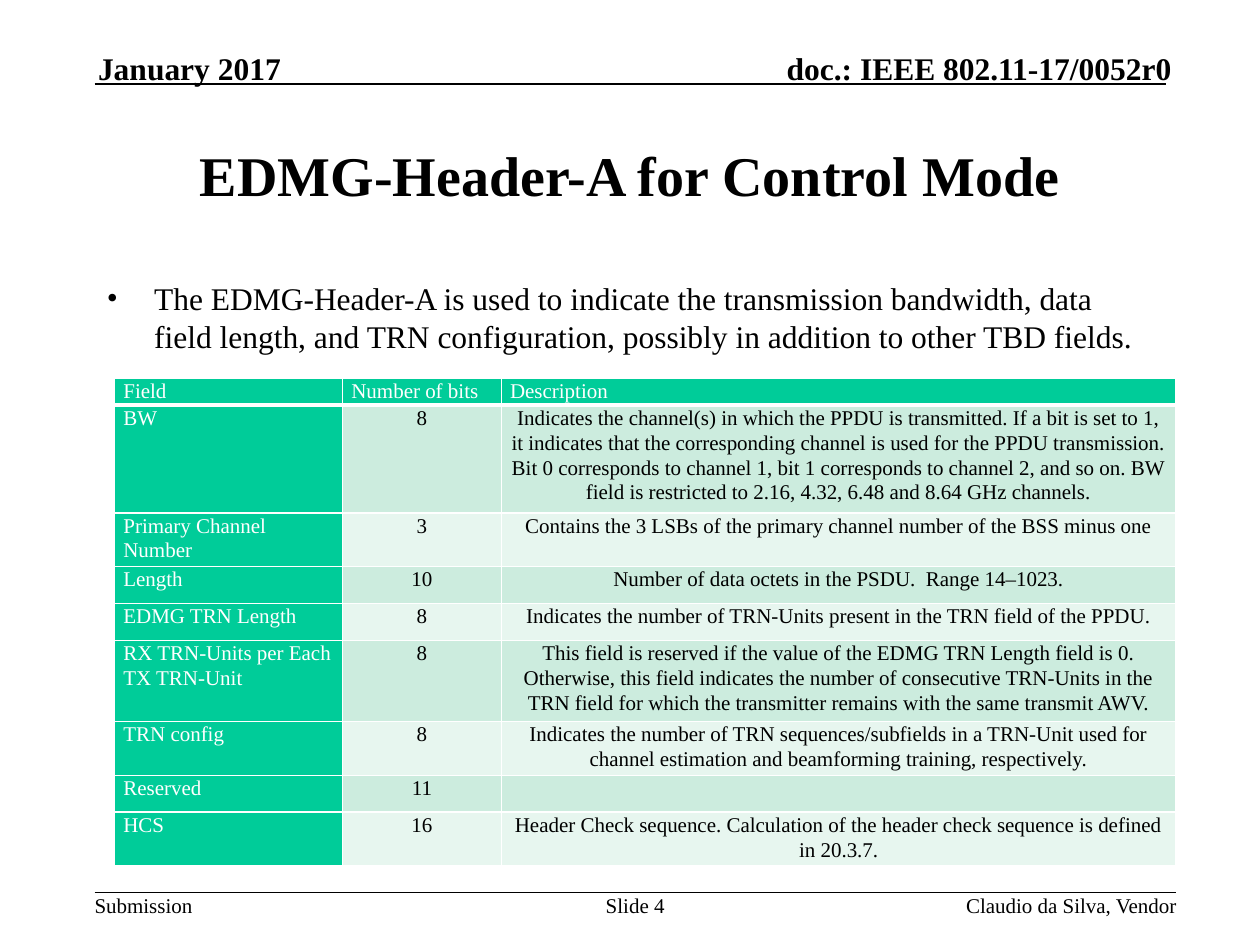
from lxml.etree import SubElement
from pptx import Presentation
from pptx.dml.color import RGBColor
from pptx.enum.shapes import MSO_CONNECTOR as CONN
from pptx.enum.text import MSO_ANCHOR as ANCHOR, PP_ALIGN as ALIGN
from pptx.oxml.ns import qn
from pptx.util import Pt

# Content
FONT = "Times New Roman"
COLORS = {"text": "000000", "white": "FFFFFF", "accent": "00CC99",
          "band_dark": "CCECDE", "band_light": "E7F6EF"}
BULLET = ("The EDMG-Header-A is used to indicate the transmission bandwidth, "
          "data field length, and TRN configuration, possibly in addition to "
          "other TBD fields.")

# text, (left, top, width, height), size, bold, alignment, anchor, wrap
LABELS = [
    ("January 2017", (56, 28, 187, 21.6), 18, True, ALIGN.LEFT, ANCHOR.BOTTOM, True),
    ("doc.: IEEE 802.11-17/0052r0", (394, 28, 275.5, 21.6), 18, True, ALIGN.RIGHT, ANCHOR.BOTTOM, True),
    ("EDMG-Header-A for Control Mode", (54, 54, 612, 91.5), 32, True, ALIGN.CENTER, ANCHOR.MIDDLE, True),
    ("Submission", (54, 510, 56, 14.4), 12, False, ALIGN.LEFT, ANCHOR.TOP, False),
    ("Slide 4", (342, 510, 42, 28.8), 12, False, ALIGN.CENTER, ANCHOR.TOP, True),
    ("Claudio da Silva, Vendor", (484, 510, 188.5, 14.4), 12, False, ALIGN.RIGHT, ANCHOR.TOP, True),
]
RULES = [(54, 48, 666, 48), (54, 510, 672, 510)]

# field, bits, description, text lines in the tallest cell
ROWS = [
    ("Field", "Number of bits", "Description", 1),
    ("BW", "8", "Indicates the channel(s) in which the PPDU is transmitted. If a bit "
     "is set to 1, it indicates that the corresponding channel is used for the PPDU "
     "transmission. Bit 0 corresponds to channel 1, bit 1 corresponds to channel 2, "
     "and so on. BW field is restricted to 2.16, 4.32, 6.48 and 8.64 GHz channels.", 4),
    ("Primary Channel Number", "3",
     "Contains the 3 LSBs of the primary channel number of the BSS minus one", 2),
    ("Length", "10", "Number of data octets in the PSDU.  Range 14–1023.", 1),
    ("EDMG TRN Length", "8",
     "Indicates the number of TRN-Units present in the TRN field of the PPDU.", 1),
    ("RX TRN-Units per Each TX TRN-Unit", "8", "This field is reserved if the value of "
     "the EDMG TRN Length field is 0. Otherwise, this field indicates the number of "
     "consecutive TRN-Units in the TRN field for which the transmitter remains with "
     "the same transmit AWV.", 3),
    ("TRN config", "8", "Indicates the number of TRN sequences/subfields in a TRN-Unit "
     "used for channel estimation and beamforming training, respectively.", 2),
    ("Reserved", "11", "", 1),
    ("HCS", "16", "Header Check sequence. Calculation of the header check sequence is "
     "defined in 20.3.7.", 2),
]
COL_WIDTHS = [130.3, 90.7, 385.6]
TABLE_LEFT, TABLE_TOP = 65.5, 216
LINE_HEIGHT, MIN_ROW = 14.2, 21.1


def rgb(name):
    return RGBColor.from_string(COLORS[name])


def style(p, size, color="text", bold=False, align=ALIGN.LEFT):
    p.alignment = align
    for r in p.runs:
        r.font.name, r.font.size, r.font.bold = FONT, Pt(size), bold
        r.font.color.rgb = rgb(color)


def add_text(slide, text, box, size, bold, align, anchor, wrap, inset=(0, 0)):
    tf = slide.shapes.add_textbox(*map(Pt, box)).text_frame
    tf.word_wrap, tf.vertical_anchor = wrap, anchor
    tf.margin_left = tf.margin_right = Pt(inset[0])
    tf.margin_top = tf.margin_bottom = Pt(inset[1])
    tf.text = text
    style(tf.paragraphs[0], size, bold=bold, align=align)
    return tf.paragraphs[0]


def add_bullet(p, indent):
    pPr = p._p.get_or_add_pPr()
    pPr.set("marL", str(Pt(indent)))
    pPr.set("indent", str(-Pt(indent)))
    color = SubElement(pPr, qn("a:buClr"))
    SubElement(color, qn("a:srgbClr"), val=COLORS["text"])
    SubElement(pPr, qn("a:buFont"), typeface=FONT)
    SubElement(pPr, qn("a:buChar"), char="•")


def set_borders(cell, widths):
    tcPr = cell._tc.get_or_add_tcPr()
    for side, width in zip("LRTB", widths):
        ln = SubElement(tcPr, qn(f"a:ln{side}"), w=str(Pt(width)))
        fill = SubElement(ln, qn("a:solidFill"))
        SubElement(fill, qn("a:srgbClr"), val=COLORS["white"])


def fill_cell(cell, text, row, col):
    header = row == 0
    accent = header or col == 0
    cell.margin_left = cell.margin_right = Pt(5)
    cell.margin_top = cell.margin_bottom = 0
    set_borders(cell, (1, 1, 3 if row == 1 else 1, 3 if header else 1))
    cell.fill.solid()
    band = "band_dark" if row % 2 else "band_light"
    cell.fill.fore_color.rgb = rgb("accent" if accent else band)
    p = cell.text_frame.paragraphs[0]
    p.text = text
    p.line_spacing = 1.07
    style(p, 12, "white" if accent else "text",
          align=ALIGN.LEFT if accent else ALIGN.CENTER)
    if not text:
        p._p.get_or_add_endParaRPr().set("sz", "1200")


def main():
    prs = Presentation()
    prs.slide_width, prs.slide_height = Pt(720), Pt(540)
    slide = prs.slides.add_slide(prs.slide_layouts[6])

    # Header and footer rules
    for ends in RULES:
        s = slide.shapes.add_connector(CONN.STRAIGHT, *map(Pt, ends))
        s.line.color.rgb, s.line.width = rgb("text"), Pt(1)
        SubElement(s._element.spPr, qn("a:effectLst"))

    # Title, header and footer text, then the bullet
    for label in LABELS:
        add_text(slide, *label)
    p = add_text(slide, BULLET, (54, 156, 612, 331), 18, False, ALIGN.LEFT,
                 ANCHOR.TOP, True, inset=(7.2, 3.6))
    # The gap above the first line is part of the box position
    add_bullet(p, 27)

    # Field table
    heights = [LINE_HEIGHT if i == 0 else max(MIN_ROW, row[3] * LINE_HEIGHT)
               for i, row in enumerate(ROWS)]
    frame = slide.shapes.add_table(
        len(ROWS), len(COL_WIDTHS), Pt(TABLE_LEFT), Pt(TABLE_TOP),
        Pt(sum(COL_WIDTHS)), Pt(sum(heights)))
    table = frame.table
    for column, width in zip(table.columns, COL_WIDTHS):
        column.width = Pt(width)
    for i, (row, height) in enumerate(zip(ROWS, heights)):
        table.rows[i].height = Pt(height)
        for j, text in enumerate(row[:3]):
            fill_cell(table.cell(i, j), text, i, j)

    prs.save("out.pptx")


if __name__ == "__main__":
    main()
